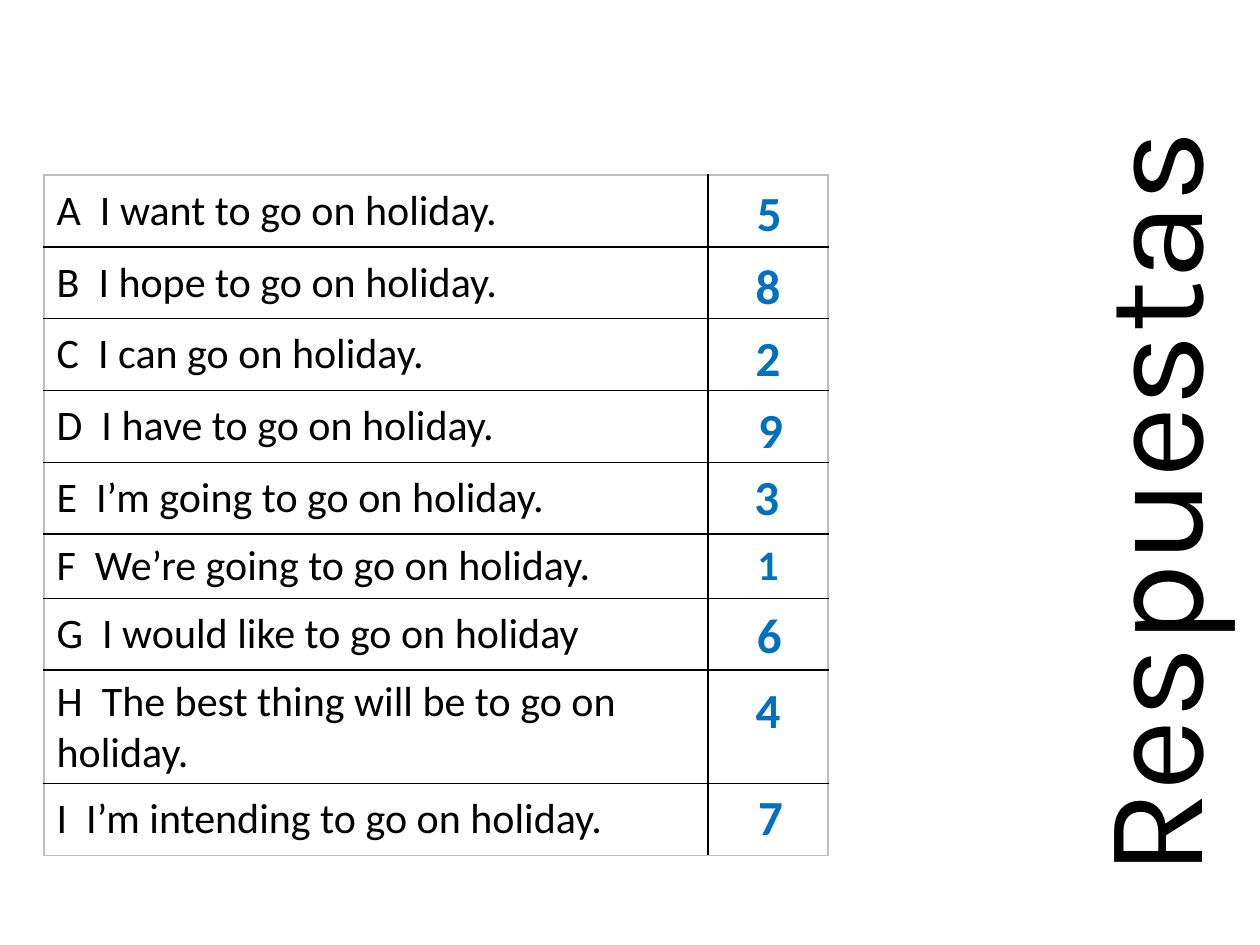
from itertools import accumulate

from lxml import etree
from pptx import Presentation
from pptx.dml.color import RGBColor
from pptx.enum import text
from pptx.oxml.ns import qn
from pptx import util as u

BLACK = RGBColor(0x00, 0x00, 0x00)
GREY = RGBColor(0xBF, 0xBF, 0xBF)
WHITE = RGBColor(0xFF, 0xFF, 0xFF)
BLUE = RGBColor(0x00, 0x70, 0xC0)

SENTENCES = [
    "A  I want to go on holiday.",
    "B  I hope to go on holiday.",
    "C  I can go on holiday.",
    "D  I have to go on holiday.",
    "E  I’m going to go on holiday.",
    "F  We’re going to go on holiday.",
    "G  I would like to go on holiday",
    "H  The best thing will be to go on holiday.",
    "I  I’m intending to go on holiday.",
]
# Row index: answer, left edge, vertical nudge from the row's top (inches)
ANSWERS = {
    0: ("5", 5.79, 0.01), 1: ("8", 5.78, 0.02), 2: ("2", 5.78, 0.02),
    3: ("9", 5.8, 0.02), 4: ("3", 5.77, -0.02), 6: ("6", 5.79, 0),
    7: ("4", 5.78, 0.02), 8: ("7", 5.8, -0.03),
}
ROW = 0.57
LEFT, TOP = 0.35, 1.39
COLUMNS = [5.27, 0.95]
ROWS = [ROW] * 5 + [0.51, ROW, 0.9, ROW]


class AnswerSlide:
    font = "Calibri"

    def __init__(self, deck):
        self.page = deck.slides.add_slide(deck.slide_layouts[5])

    def format(self, frame, size, color, bold=False, font=None,
               align=text.PP_ALIGN.LEFT):
        for para in frame.paragraphs:
            para.alignment = align
            for span in para.runs:
                span.font.name = font or self.font
                span.font.size = u.Pt(size)
                span.font.bold = bold
                span.font.color.rgb = color

    def place(self, box, left, top, width, height):
        box.left, box.top = u.Inches(left), u.Inches(top)
        box.width, box.height = u.Inches(width), u.Inches(height)

    def title(self, words, *bounds):
        box = self.page.shapes.title
        self.place(box, *bounds)
        box.rotation = 270
        frame = box.text_frame
        frame.text = words
        frame.word_wrap = True
        frame.auto_size = text.MSO_AUTO_SIZE.SHAPE_TO_FIT_TEXT
        frame.vertical_anchor = text.MSO_ANCHOR.TOP
        self.format(frame, 80, BLACK, font="Karla")

    def border(self, cell, side, color):
        line = etree.Element(qn(f"a:ln{side}"), w=str(u.Pt(1)))
        fill = etree.SubElement(line, qn("a:solidFill"))
        etree.SubElement(fill, qn("a:srgbClr"), val=str(color))
        cell._tc.get_or_add_tcPr().append(line)

    def table(self, sentences):
        rows, columns = len(ROWS), len(COLUMNS)
        grid = self.page.shapes.add_table(
            rows, columns, u.Inches(LEFT), u.Inches(TOP),
            u.Inches(sum(COLUMNS)), u.Inches(sum(ROWS))).table
        grid.first_row = grid.horz_banding = False
        for column, width in zip(grid.columns, COLUMNS):
            column.width = u.Inches(width)
        for r, height in enumerate(ROWS):
            grid.rows[r].height = u.Inches(height)
            for c in range(columns):
                cell = grid.cell(r, c)
                outer = {"L": c == 0, "R": c == columns - 1,
                         "T": r == 0, "B": r == rows - 1}
                for side, is_outer in outer.items():
                    self.border(cell, side, GREY if is_outer else BLACK)
                cell.fill.solid()
                cell.fill.fore_color.rgb = WHITE
                cell.vertical_anchor = text.MSO_ANCHOR.MIDDLE
            grid.cell(r, 0).text_frame.text = sentences[r]
            self.format(grid.cell(r, 0).text_frame, 24, BLACK)
        return grid

    def answer(self, words, left, top):
        box = self.page.shapes.add_textbox(0, 0, 0, 0)
        self.place(box, left, top, 0.63, ROW)
        frame = box.text_frame
        frame.text = words
        frame.word_wrap = True
        frame.auto_size = text.MSO_AUTO_SIZE.SHAPE_TO_FIT_TEXT
        frame.vertical_anchor = text.MSO_ANCHOR.MIDDLE
        self.format(frame, 28, BLUE, True, align=text.PP_ALIGN.CENTER)


def main():
    deck = Presentation()
    deck.slide_width, deck.slide_height = u.Inches(10), u.Inches(7.5)
    slide = AnswerSlide(deck)

    # Sentences, with one answer typed in its cell
    grid = slide.table(SENTENCES)
    frame = grid.cell(5, 1).text_frame
    frame.text = "1"
    slide.format(frame, 24, BLUE, True, align=text.PP_ALIGN.CENTER)

    # Answers laid over the second column
    tops = list(accumulate(ROWS, initial=TOP))
    for row, (words, left, nudge) in ANSWERS.items():
        slide.answer(words, left, tops[row] + nudge)

    # Vertical title
    slide.title("Respuestas", 5.05, 2.28, 8.11, 1.45)
    deck.save("out.pptx")


if __name__ == "__main__":
    main()
